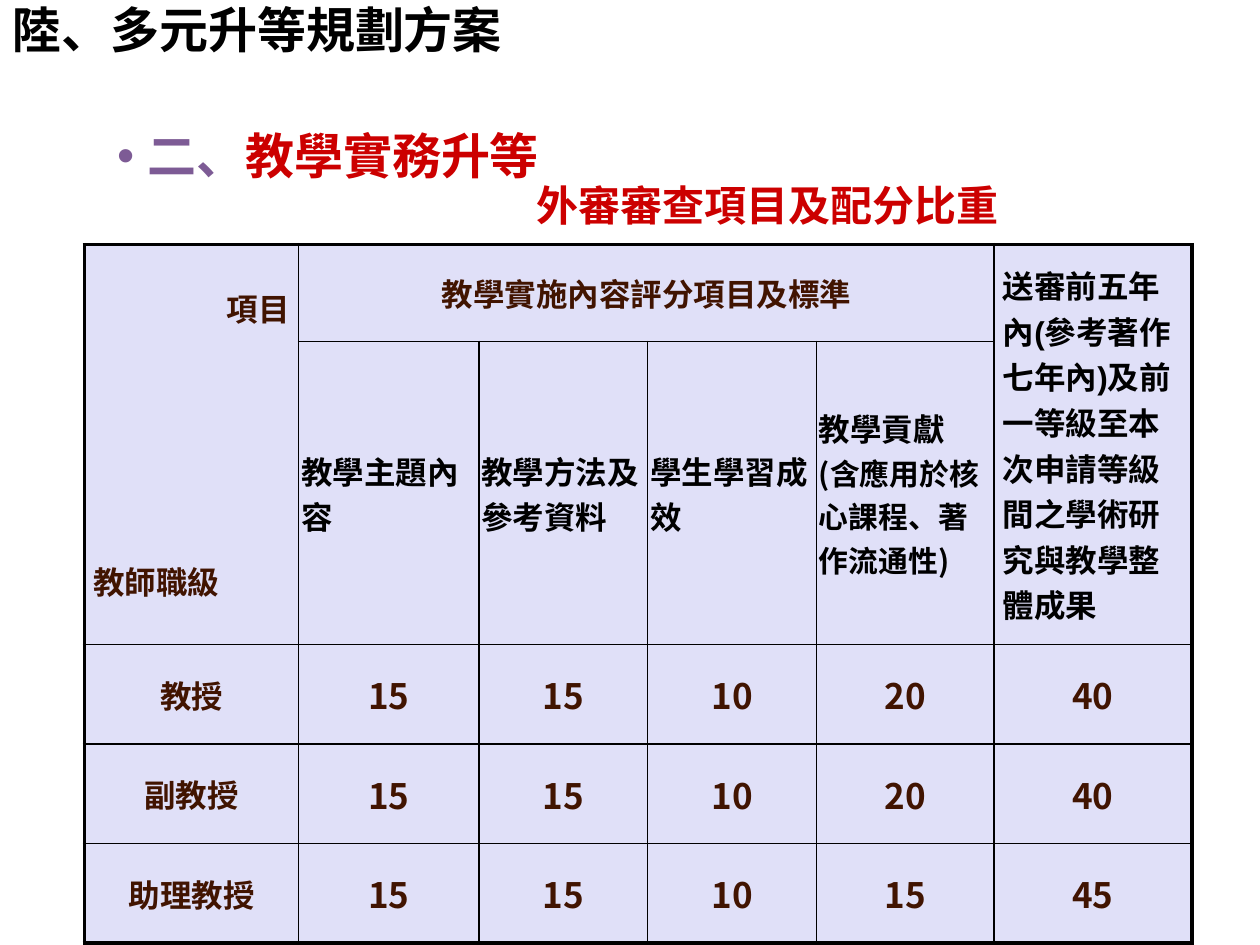
from lxml.etree import SubElement
from pptx import Presentation
from pptx.dml.color import RGBColor
from pptx.enum.text import MSO_ANCHOR as Anchor, MSO_AUTO_SIZE as AutoSize, PP_ALIGN as Align
from pptx.oxml.ns import qn
from pptx.util import Inches, Pt

# Content
TITLE = "陸、多元升等規劃方案"
SECTION_NUMBER, SECTION_NAME = "二、", "教學實務升等"
TABLE_CAPTION = "外審審查項目及配分比重"
CORNER = ("項目", "教師職級")
GROUP_HEADER = "教學實施內容評分項目及標準"
OVERALL_HEADER = "送審前五年內(參考著作七年內)及前一等級至本次申請等級間之學術研究與教學整體成果"
CRITERIA = [
    ["教學主題內容"],
    ["教學方法及", "參考資料"],
    ["學生學習成效"],
    ["教學貢獻", "(含應用於核心課程、著作流通性)"],
]
WEIGHTS = [
    ("教授", 15, 15, 10, 20, 40),
    ("副教授", 15, 15, 10, 20, 40),
    ("助理教授", 15, 15, 10, 15, 45),
]

THEME = {
    "font": "Noto Sans CJK SC", "overall_font": "Arial",
    "ink": "000000", "accent": "CC0000", "number": "7D5B95",
    "label": "411401", "cell": "E0E0F8",
    "heading": 28, "caption": 24, "score": 20, "text": 18, "small": 17,
    "outer_line": 2.25, "inner_line": 1,
}
COLUMNS = [1.7, 1.43, 1.34, 1.34, 1.41, 1.57]
ROWS = [0.77, 2.4, 0.79, 0.79, 0.79]
WIDE_INSET, NARROW_INSET = 0.07, 0.02


def write(paragraph, text, size=THEME["text"], color=THEME["ink"], font=THEME["font"],
          align=Align.LEFT, before=0, spacing=1.0):
    """Add one formatted run to a paragraph."""
    paragraph.alignment = align
    paragraph.space_before = Pt(before)
    paragraph.line_spacing = spacing
    run = paragraph.add_run()
    run.text = str(text)
    run.font.size, run.font.bold, run.font.name = Pt(size), True, font
    run.font.color.rgb = RGBColor.from_string(color)
    SubElement(run.font._element, qn("a:ea"), typeface=THEME["font"])


def indent(paragraph, left, first, bullet=None):
    """Set the indents and the bullet of a paragraph."""
    props = paragraph._p.get_or_add_pPr()
    props.set("marL", str(Inches(left)))
    props.set("indent", str(Inches(first)))
    if bullet:
        SubElement(props, qn("a:buChar"), char=bullet)
    else:
        SubElement(props, qn("a:buNone"))


def place(placeholder, left, top, width, height, anchor):
    placeholder.left, placeholder.top = Inches(left), Inches(top)
    placeholder.width, placeholder.height = Inches(width), Inches(height)
    frame = placeholder.text_frame
    frame.word_wrap, frame.vertical_anchor = True, anchor
    return frame


def format_cell(cell, row, column, inset):
    """Draw the borders, heavy along the table edge, then the fill."""
    cell.vertical_anchor = Anchor.MIDDLE
    cell.margin_left = cell.margin_right = Inches(inset)
    cell.margin_top = cell.margin_bottom = 0
    at_edge = {
        "a:lnL": column == 0,
        "a:lnR": column + cell.span_width == len(COLUMNS),
        "a:lnT": row == 0,
        "a:lnB": row + cell.span_height == len(ROWS),
    }
    props = cell._tc.get_or_add_tcPr()
    for side, outer in at_edge.items():
        weight = THEME["outer_line" if outer else "inner_line"]
        line = SubElement(props, qn(side), w=str(Pt(weight)))
        SubElement(SubElement(line, qn("a:solidFill")), qn("a:srgbClr"), val=THEME["ink"])
    cell.fill.solid()
    cell.fill.fore_color.rgb = RGBColor.from_string(THEME["cell"])


def fill_cell(table, row, column, lines, inset=WIDE_INSET):
    """Write (text, format) lines into a cell."""
    cell = table.cell(row, column)
    format_cell(cell, row, column, inset)
    frame = cell.text_frame
    for number, (text, style) in enumerate(lines):
        paragraph = frame.add_paragraph() if number else frame.paragraphs[0]
        write(paragraph, text, **style)


def add_headings(slide):
    title = place(slide.shapes.title, 0, 0, 5.47, 0.52, Anchor.TOP)
    title.auto_size = AutoSize.NONE
    write(title.paragraphs[0], TITLE, size=THEME["heading"], spacing=0.9)

    body = place(slide.placeholders[1], 0.83, 0.92, 7.8, 1.04, Anchor.MIDDLE)
    body.auto_size = AutoSize.SHAPE_TO_FIT_TEXT
    section, caption = body.paragraphs[0], body.add_paragraph()
    indent(section, 0.24, -0.24, "•")
    write(section, SECTION_NUMBER, THEME["heading"], THEME["number"], spacing=0.9)
    write(section, SECTION_NAME, THEME["heading"], THEME["accent"], spacing=0.9)
    indent(caption, 3.33, 0)
    write(caption, TABLE_CAPTION, THEME["caption"], THEME["accent"], spacing=0.9)


def add_weight_table(slide):
    table = slide.shapes.add_table(
        len(ROWS), len(COLUMNS), Inches(0.67), Inches(1.94),
        Inches(sum(COLUMNS)), Inches(sum(ROWS))).table
    # Plain style without a grid
    style = table._tbl.tblPr.find(qn("a:tableStyleId"))
    style.text = "{2D5ABB26-0587-4C30-8999-92F81FD0307C}"
    table.first_row = table.horz_banding = False
    for column, width in zip(table.columns, COLUMNS):
        column.width = Inches(width)
    for row, height in zip(table.rows, ROWS):
        row.height = Inches(height)

    # Header rows
    last = len(COLUMNS) - 1
    table.cell(0, 0).merge(table.cell(1, 0))
    table.cell(0, 1).merge(table.cell(0, last - 1))
    table.cell(0, last).merge(table.cell(1, last))
    label = {"color": THEME["label"]}
    centred = {**label, "align": Align.CENTER}
    fill_cell(table, 0, 0, [(CORNER[0], {**label, "align": Align.RIGHT}),
                            (CORNER[1], {**label, "before": 130})])
    fill_cell(table, 0, 1, [(GROUP_HEADER, centred)])
    fill_cell(table, 0, last, [(OVERALL_HEADER, {"font": THEME["overall_font"]})])
    for column, lines in enumerate(CRITERIA, start=1):
        styled = [(text, {"size": THEME["small" if text.startswith("(") else "text"]})
                  for text in lines]
        fill_cell(table, 1, column, styled, NARROW_INSET)

    # Weights per rank
    for row, values in enumerate(WEIGHTS, start=2):
        for column, value in enumerate(values):
            size = THEME["score" if column else "text"]
            fill_cell(table, row, column, [(value, {**centred, "size": size})])


def main():
    deck = Presentation()
    deck.slide_width, deck.slide_height = Inches(10), Inches(7.5)
    slide = deck.slides.add_slide(deck.slide_layouts[1])
    add_headings(slide)
    add_weight_table(slide)
    deck.save("out.pptx")


if __name__ == "__main__":
    main()
